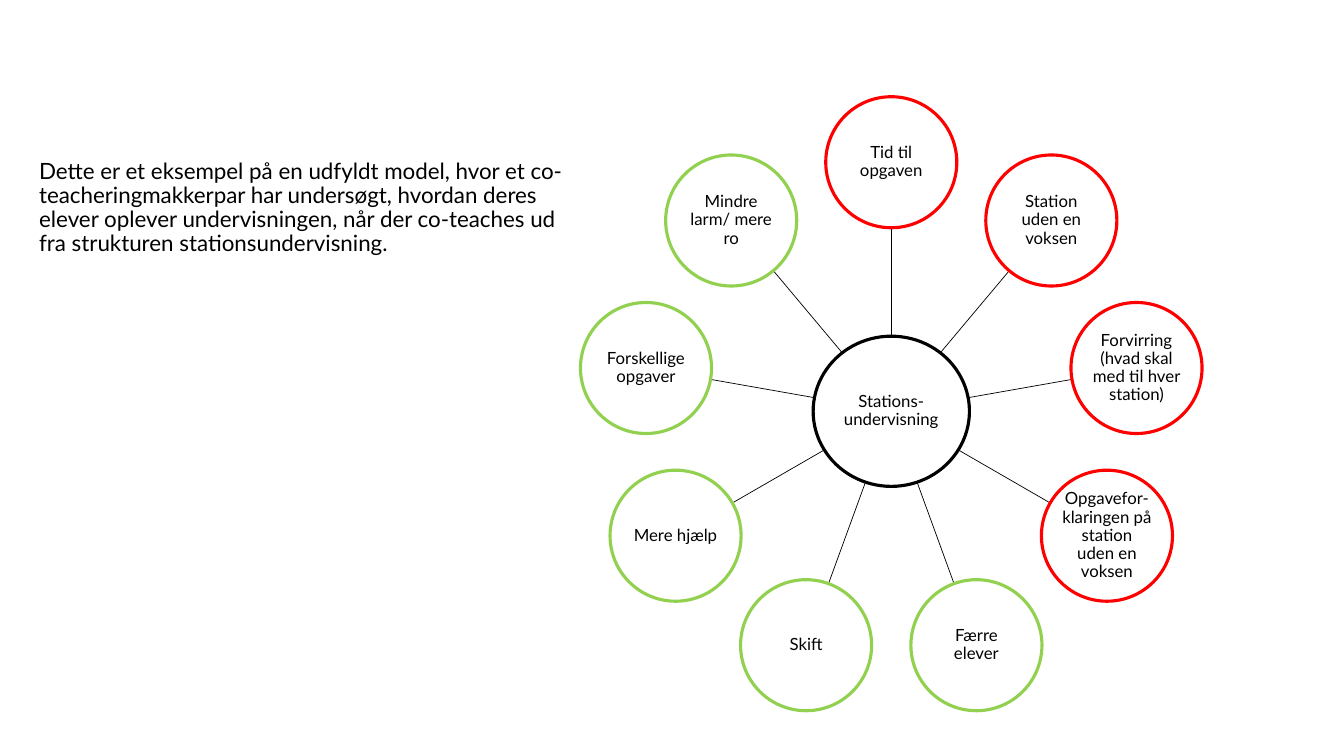
from math import cos, hypot, radians, sin

from lxml import etree
from pptx import Presentation
from pptx.dml.color import RGBColor
from pptx.enum import shapes, text
from pptx.oxml import ns
from pptx.util import Inches, Pt

BLACK = RGBColor(0, 0, 0)
WHITE = RGBColor(255, 255, 255)
RED = RGBColor(255, 0, 0)
GREEN = RGBColor(0x92, 0xD0, 0x50)
FONT = "Lato"

INTRO = (
    "Dette er et eksempel på en udfyldt model, hvor et co-teacheringmakkerpar "
    "har undersøgt, hvordan deres elever oplever undervisningen, når der "
    "co-teaches ud fra strukturen stationsundervisning."
)
THEME = "Stations-undervisning"
EXPERIENCES = [
    ("Tid til opgaven", RED),
    ("Station uden en voksen", RED),
    ("Forvirring (hvad skal med til hver station)", RED),
    ("Opgavefor-klaringen på station uden en voksen", RED),
    ("Færre\velever", GREEN),
    ("Skift", GREEN),
    ("Mere hjælp", GREEN),
    ("Forskellige opgaver", GREEN),
    ("Mindre larm/ mere ro", GREEN),
]


def write(frame, wording, size, align):
    """Fill a text frame with one paragraph in the slide's type style."""
    frame.word_wrap = True
    frame.vertical_anchor = text.MSO_ANCHOR.MIDDLE
    paragraph = frame.paragraphs[0]
    paragraph.text = wording
    paragraph.alignment = align
    paragraph.line_spacing = 0.9
    paragraph.font.name = FONT
    paragraph.font.size = Pt(size)
    paragraph.font.color.rgb = BLACK


def add_intro(slide, left, top, width, height):
    """Place the introduction in the given box."""
    intro = slide.shapes.add_textbox(
        Inches(left), Inches(top), Inches(width), Inches(height))
    intro.text_frame.margin_top = Inches(0.29)
    write(intro.text_frame, INTRO, 16, text.PP_ALIGN.LEFT)


def add_circle(slide, x, y, width, height, wording, outline):
    """Draw a labelled circle centred on x, y."""
    circle = slide.shapes.add_shape(
        shapes.MSO_SHAPE.OVAL, Inches(x - width / 2), Inches(y - height / 2),
        Inches(width), Inches(height))
    circle.shadow.inherit = False
    circle.fill.solid()
    circle.fill.fore_color.rgb = WHITE
    circle.line.color.rgb = outline
    circle.line.width = Pt(2.25)
    frame = circle.text_frame
    frame.margin_left = frame.margin_right = Inches(0.01)
    frame.margin_top = frame.margin_bottom = Inches(0.01)
    write(frame, wording, 12, text.PP_ALIGN.CENTER)


def add_spoke(slide, x1, y1, x2, y2):
    """Draw a thin line between two points."""
    spoke = slide.shapes.add_connector(
        shapes.MSO_CONNECTOR.STRAIGHT,
        Inches(x1), Inches(y1), Inches(x2), Inches(y2))
    spoke.line.color.rgb = BLACK
    spoke.line.width = Pt(0.5)
    etree.SubElement(spoke._element.spPr, ns.qn("a:effectLst"))


def add_wheel(slide, left, top, width):
    """Arrange the experiences evenly around the theme, in a box of the given width."""
    hub_width, hub_height, diameter, radius = 1.55, 1.49, 1.3, 2.47
    x, y = left + width / 2, top + diameter / 2 + radius
    add_circle(slide, x, y, hub_width, hub_height, THEME, BLACK)
    for index, (wording, outline) in enumerate(EXPERIENCES):
        angle = radians(index * 360 / len(EXPERIENCES) - 90)
        dx, dy = cos(angle), sin(angle)
        start = 1 / hypot(2 * dx / hub_width, 2 * dy / hub_height)
        end = radius - diameter / 2
        add_spoke(slide, x + start * dx, y + start * dy, x + end * dx, y + end * dy)
        add_circle(slide, x + radius * dx, y + radius * dy,
                   diameter, diameter, wording, outline)


def main():
    """Build and save the slide."""
    deck = Presentation()
    deck.slide_width, deck.slide_height = Inches(13.33), Inches(7.5)
    slide = deck.slides.add_slide(deck.slide_layouts[6])
    add_intro(slide, 0.29, 0.48, 5.44, 2.93)
    add_wheel(slide, 5.76, 0.96, 6.16)
    deck.save("out.pptx")


if __name__ == "__main__":
    main()
